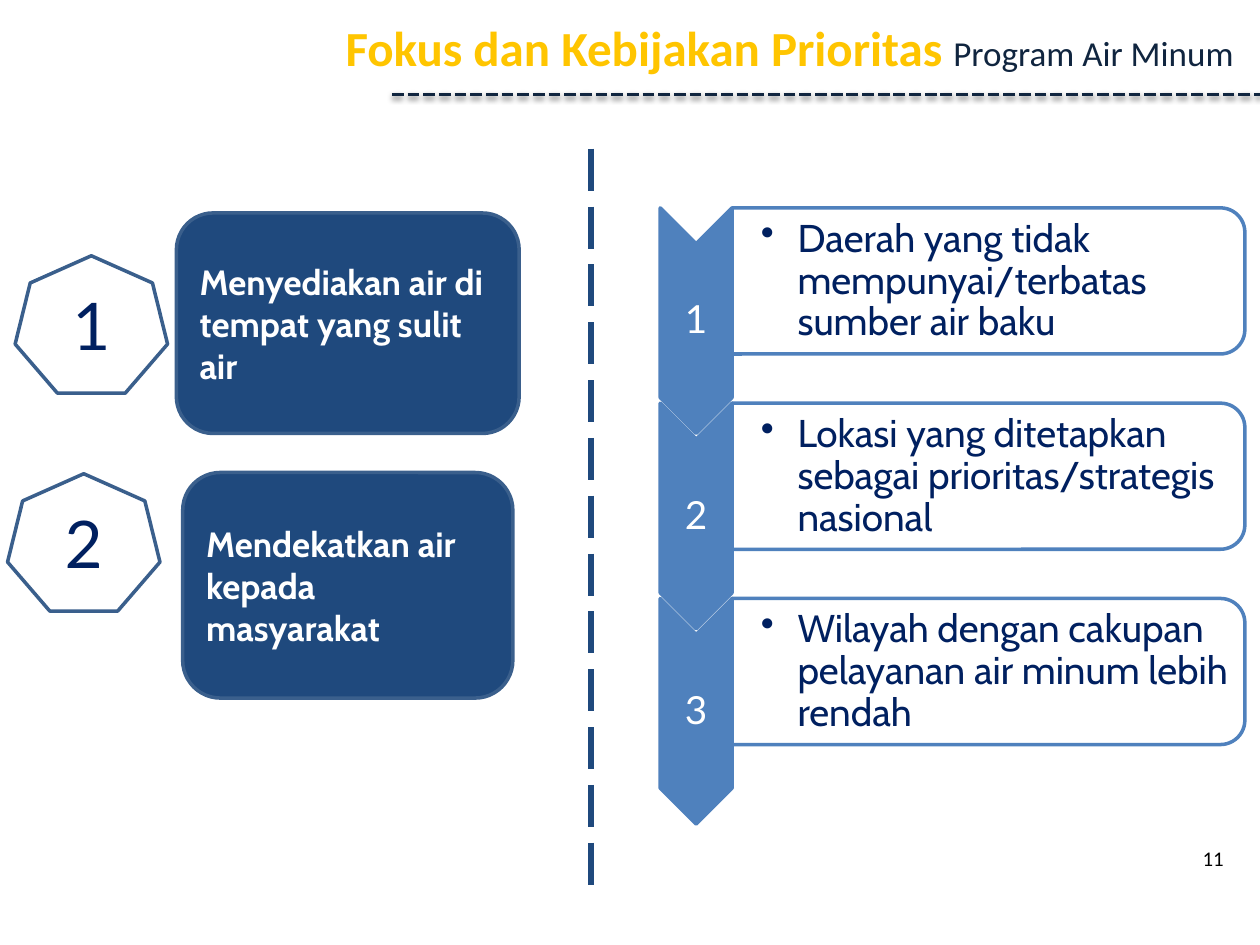
from collections import namedtuple
from dataclasses import dataclass

from lxml.etree import SubElement
from pptx import Presentation
from pptx.dml.color import RGBColor
from pptx.enum.dml import MSO_LINE_DASH_STYLE as Dash
from pptx.enum.shapes import MSO_CONNECTOR as Connector, MSO_SHAPE as Shape
from pptx.enum.text import MSO_ANCHOR as Anchor, PP_ALIGN as Align
from pptx.oxml.ns import qn
from pptx.util import Emu, Inches, Pt

# All lengths are cells of a grid of 100 columns by 75 rows.
COLUMNS, ROWS = 100, 75
CELL = Inches(0.1)

Box = namedtuple("Box", "left top width height")
Span = namedtuple("Span", "text size color bold font")


@dataclass(frozen=True)
class Theme:
    gold: str = "FFC500"
    ink: str = "10253F"
    navy: str = "1F497D"
    edge: str = "3A5F8C"
    blue: str = "4F81BD"
    deep: str = "002060"
    white: str = "FFFFFF"
    black: str = "000000"
    plain: str = "Calibri"
    body: str = "Cabin"
    digit: str = "Lato"
    title: float = 28
    subtitle: float = 20
    card: float = 20
    step: float = 22.1
    badge: float = 37.5
    number: float = 11.9
    outline: float = 2


THEME = Theme()


def cells(count):
    return Emu(round(count * CELL))


def emu(box):
    return [cells(value) for value in box]


def write(shape, *spans, align=Align.LEFT, anchor=Anchor.MIDDLE,
          insets=(1, 0.5, 1, 0.5), spacing=None, hanging=0):
    """Fill a shape with one paragraph; a hanging indent also gives it a bullet."""
    frame = shape.text_frame
    frame.word_wrap = True
    frame.vertical_anchor = anchor
    (frame.margin_left, frame.margin_top,
     frame.margin_right, frame.margin_bottom) = emu(insets)
    para = frame.paragraphs[0]
    para.alignment = align
    para.line_spacing = spacing
    if hanging:
        properties = para._p.get_or_add_pPr()
        properties.set("marL", str(cells(hanging)))
        properties.set("indent", str(-cells(hanging)))
        SubElement(properties, qn("a:buChar"), char="•")
    for span in spans:
        run = para.add_run()
        run.text = span.text
        run.font.name = span.font
        run.font.size = Pt(span.size)
        run.font.bold = span.bold
        run.font.color.rgb = RGBColor.from_string(span.color)


def add_text(page, box, *spans, **layout):
    write(page.shapes.add_textbox(*emu(box)), *spans, **layout)


def add_outline(page, kind, box, edge, fill=None, opacity=100):
    shape = page.shapes.add_shape(kind, *emu(box))
    shape.shadow.inherit = False
    shape.line.color.rgb = RGBColor.from_string(edge)
    shape.line.width = Pt(THEME.outline)
    if fill is None:
        shape.fill.background()
        return shape
    shape.fill.solid()
    shape.fill.fore_color.rgb = RGBColor.from_string(fill)
    if opacity < 100:
        color = shape._element.spPr.find(qn("a:solidFill"))[0]
        SubElement(color, qn("a:alpha"), val=str(opacity * 1000))
    return shape


def add_turned(page, kind, box, edge, **format):
    """Draw a shape turned a quarter clockwise so that it covers the box."""
    left = box.left + (box.width - box.height) / 2
    top = box.top + (box.height - box.width) / 2
    unturned = Box(left, top, box.height, box.width)
    add_outline(page, kind, unturned, edge, **format).rotation = 90


def add_dashes(page, start, end, color, width, dash, shadow=False):
    line = page.shapes.add_connector(Connector.STRAIGHT, *emu(start), *emu(end))
    line.line.color.rgb = RGBColor.from_string(color)
    line.line.width = Pt(width)
    line.line.dash_style = dash
    effects = SubElement(line._element.spPr, qn("a:effectLst"))
    if shadow:
        outer = SubElement(effects, qn("a:outerShdw"), blurRad=str(Pt(3.1)),
                           dist=str(Pt(1.6)), dir="5400000", rotWithShape="0")
        black = SubElement(outer, qn("a:srgbClr"), val=THEME.black)
        SubElement(black, qn("a:alpha"), val="38000")


def add_header(page, box):
    add_text(page, box,
             Span("Fokus dan Kebijakan Prioritas ", THEME.title, THEME.gold,
                  True, THEME.plain),
             Span("Program Air Minum", THEME.subtitle, THEME.ink,
                  False, THEME.plain),
             align=Align.RIGHT, anchor=Anchor.TOP)
    rule = box.top + box.height + 0.9
    add_dashes(page, (31.1, rule), (COLUMNS, rule), THEME.ink, 2.25,
               Dash.SQUARE_DOT, shadow=True)


def add_focus(page, badge, card, number, text):
    write(add_outline(page, Shape.ROUNDED_RECTANGLE, card, THEME.edge,
                      fill=THEME.navy),
          Span(text, THEME.card, THEME.white, True, THEME.body))
    write(add_outline(page, Shape.HEPTAGON, badge, THEME.edge),
          Span(str(number), THEME.badge, THEME.deep, False, THEME.digit),
          align=Align.CENTER)


def add_policies(page, box, texts, pitch=15.5):
    """Stack numbered arrows down the left of the box, each with its panel."""
    arrow_width, arrow_height, panel_height = 5.7, 17.9, 11.6
    panel_width = box.width - arrow_width
    for index, text in enumerate(texts):
        top = box.top + index * pitch
        arrow = Box(box.left, top, arrow_width, arrow_height)
        panel = Box(box.left + arrow_width, top, panel_width, panel_height)
        add_turned(page, Shape.CHEVRON, arrow, THEME.blue, fill=THEME.blue)
        add_text(page, Box(arrow.left, top + 6.3, arrow_width, 5.4),
                 Span(str(index + 1), THEME.step, THEME.white, False,
                      THEME.digit),
                 align=Align.CENTER, insets=(0.2,) * 4, spacing=0.9)
        add_turned(page, Shape.ROUND_2_SAME_RECTANGLE, panel, THEME.blue,
                   fill=THEME.white, opacity=90)
        add_text(page, Box(panel.left, top + 0.6, panel_width - 0.3, 10.5),
                 Span(text, THEME.step, THEME.deep, False, THEME.body),
                 insets=(2.3, 0.2, 0.2, 0.2), spacing=0.9, hanging=2.9)


def add_page_number(page, box, number):
    add_text(page, box,
             Span(str(number), THEME.number, THEME.black, False, THEME.plain),
             align=Align.RIGHT)


def main():
    deck = Presentation()
    deck.slide_width, deck.slide_height = cells(COLUMNS), cells(ROWS)
    page = deck.slides.add_slide(deck.slide_layouts[6])
    add_page_number(page, Box(73.3, 66.4, 24.8, 3.4), 11)
    add_policies(page, Box(52.4, 16.5, 46.4, 48.9), [
        "Daerah yang tidak mempunyai/terbatas sumber air baku",
        "Lokasi yang ditetapkan sebagai prioritas/strategis nasional",
        "Wilayah dengan cakupan pelayanan air minum lebih rendah",
    ])
    add_header(page, Box(-4.3, 0.9, 103.2, 5.7))
    add_focus(page, Box(1.2, 20.3, 12.1, 10.9), Box(14, 16.9, 27.2, 17.5),
              1, "Menyediakan air di tempat yang sulit air")
    add_focus(page, Box(0.6, 37.6, 12.1, 10.9), Box(14.5, 37.5, 26.2, 17.9),
              2, "Mendekatkan air kepada masyarakat")
    add_dashes(page, (46.9, 11.8), (46.9, 71.4), THEME.navy, 3, Dash.LONG_DASH)
    deck.save("out.pptx")


if __name__ == "__main__":
    main()
